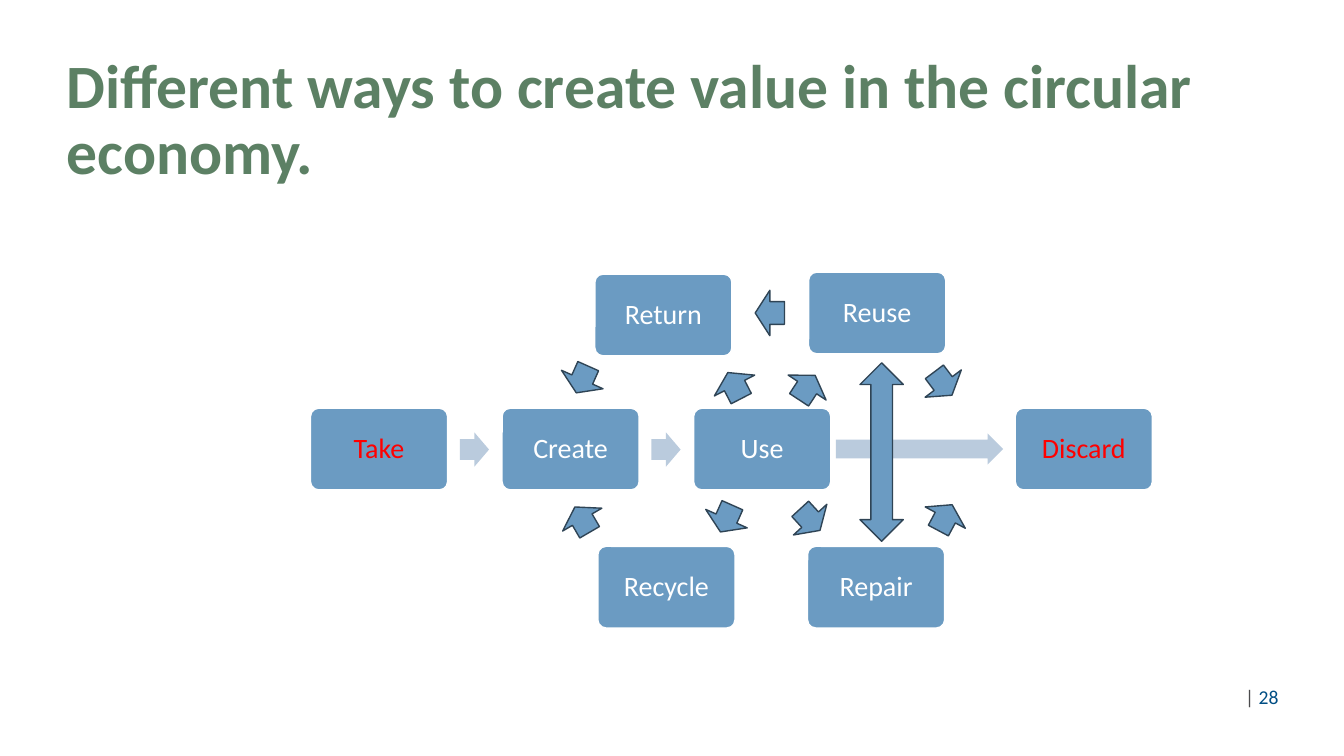
from pptx import Presentation
from pptx.dml.color import RGBColor
from pptx.enum.shapes import MSO_SHAPE
from pptx.enum.text import MSO_ANCHOR, MSO_AUTO_SIZE, PP_ALIGN
from pptx.util import Inches, Pt

ROUNDED = MSO_SHAPE.ROUNDED_RECTANGLE
RIGHT_ARROW = MSO_SHAPE.RIGHT_ARROW
LEFT_ARROW = MSO_SHAPE.LEFT_ARROW
UP_DOWN_ARROW = MSO_SHAPE.UP_DOWN_ARROW
MIDDLE = MSO_ANCHOR.MIDDLE

COLORS = {
    "title": "5C8064",
    "blue": "6B9BC2",
    "pale": "BACBDD",
    "outline": "2F4455",
    "white": "FFFFFF",
    "red": "FF0000",
    "gray": "4B4B4D",
    "navy": "004E84",
}
FONT = "Calibri"


def add_figure(kind, left, top, width, height, fill, line=None):
    shape = page.shapes.add_shape(
        kind, Inches(left), Inches(top), Inches(width), Inches(height))
    shape.shadow.inherit = False
    shape.fill.solid()
    shape.fill.fore_color.rgb = RGBColor.from_string(COLORS[fill])
    if line:
        shape.line.color.rgb = RGBColor.from_string(COLORS[line])
        shape.line.width = Pt(1)
    else:
        shape.line.fill.background()
    return shape


def set_font(font, size, color, bold=False):
    font.name = FONT
    font.size = Pt(size)
    font.bold = bold
    font.color.rgb = RGBColor.from_string(COLORS[color])


deck = Presentation()
deck.slide_width = Inches(13.33)
deck.slide_height = Inches(7.5)
page = deck.slides.add_slide(deck.slide_layouts[5])

title = page.shapes.title
title.left, title.top = Inches(0.56), Inches(0.42)
title.width, title.height = Inches(12.09), Inches(1.57)
title.text_frame.text = "Different ways to create value in the circular economy."
title.text_frame.vertical_anchor = MIDDLE
title.text_frame.auto_size = MSO_AUTO_SIZE.NONE
para = title.text_frame.paragraphs[0]
para.alignment = PP_ALIGN.LEFT
para.line_spacing = 0.9
set_font(para.font, 44, "title", bold=True)

number_box = page.shapes.add_textbox(
    Inches(12.35), Inches(6.79), Inches(0.68), Inches(0.24))
frame = number_box.text_frame
frame.word_wrap = True
frame.vertical_anchor = MIDDLE
frame.margin_left = frame.margin_right = frame.margin_top = frame.margin_bottom = 0
for text, color in [("| ", "gray"), ("28", "navy")]:
    span = frame.paragraphs[0].add_run()
    span.text = text
    set_font(span.font, 14, color)

stages = [
    ("Take", 3.08, 4.05, "red"),
    ("Create", 4.98, 4.05, "white"),
    ("Use", 6.88, 4.05, "white"),
    ("Discard", 10.07, 4.05, "red"),
    ("Recycle", 5.93, 5.42, "white"),
    ("Repair", 8.01, 5.42, "white"),
    ("Return", 5.9, 2.72, "white"),
    ("Reuse", 8.02, 2.7, "white"),
]
for name, left, top, color in stages:
    box = add_figure(ROUNDED, left, top, 1.36, 0.81, "blue", "white")
    box.adjustments[0] = 0.1
    frame = box.text_frame
    frame.word_wrap = True
    frame.vertical_anchor = MIDDLE
    frame.text = name
    para = frame.paragraphs[0]
    para.alignment = PP_ALIGN.CENTER
    para.line_spacing = 0.9
    set_font(para.font, 20, color)

linear_arrows = [
    (4.56, 4.29, 0.29, 0.34),
    (6.46, 4.29, 0.29, 0.34),
    (8.29, 4.3, 1.66, 0.31),
]
for left, top, width, height in linear_arrows:
    arrow = add_figure(RIGHT_ARROW, left, top, width, height, "pale")
    arrow.adjustments[0] = 0.6
    arrow.adjustments[1] = 0.5

loop_arrows = [
    (5.63, 3.54, 294),
    (7.14, 3.6, 62.7),
    (7.49, 2.88, 0),
    (7.86, 3.62, 123.3),
    (5.63, 4.93, 59.8),
    (7.06, 4.92, 294),
    (7.89, 4.93, 227.4),
    (9.21, 3.58, 233),
    (9.23, 4.91, 118),
]
for left, top, angle in loop_arrows:
    arrow = add_figure(LEFT_ARROW, left, top, 0.29, 0.45, "blue", "outline")
    arrow.rotation = angle

add_figure(UP_DOWN_ARROW, 8.53, 3.6, 0.43, 1.77, "blue", "outline")

deck.save("out.pptx")
